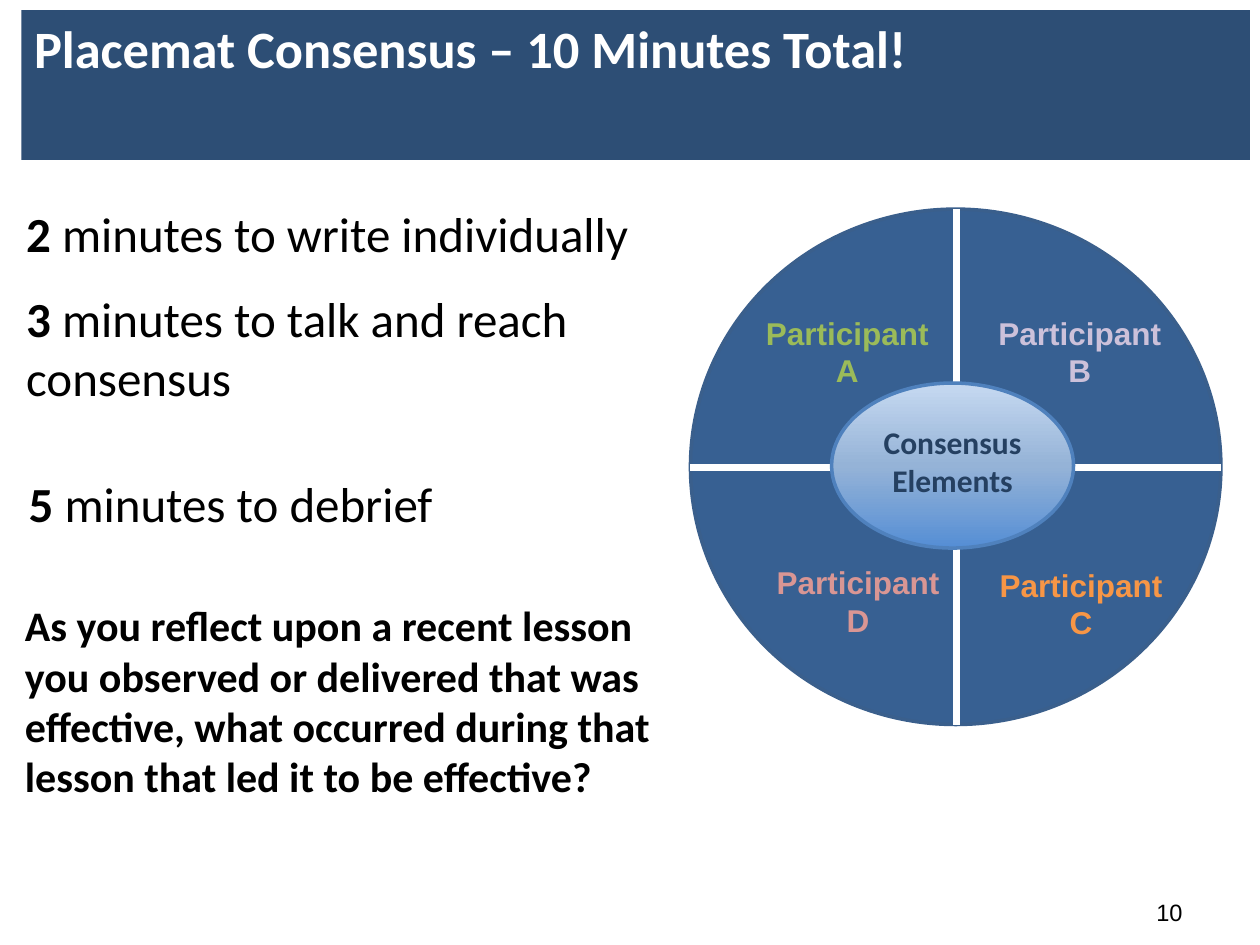
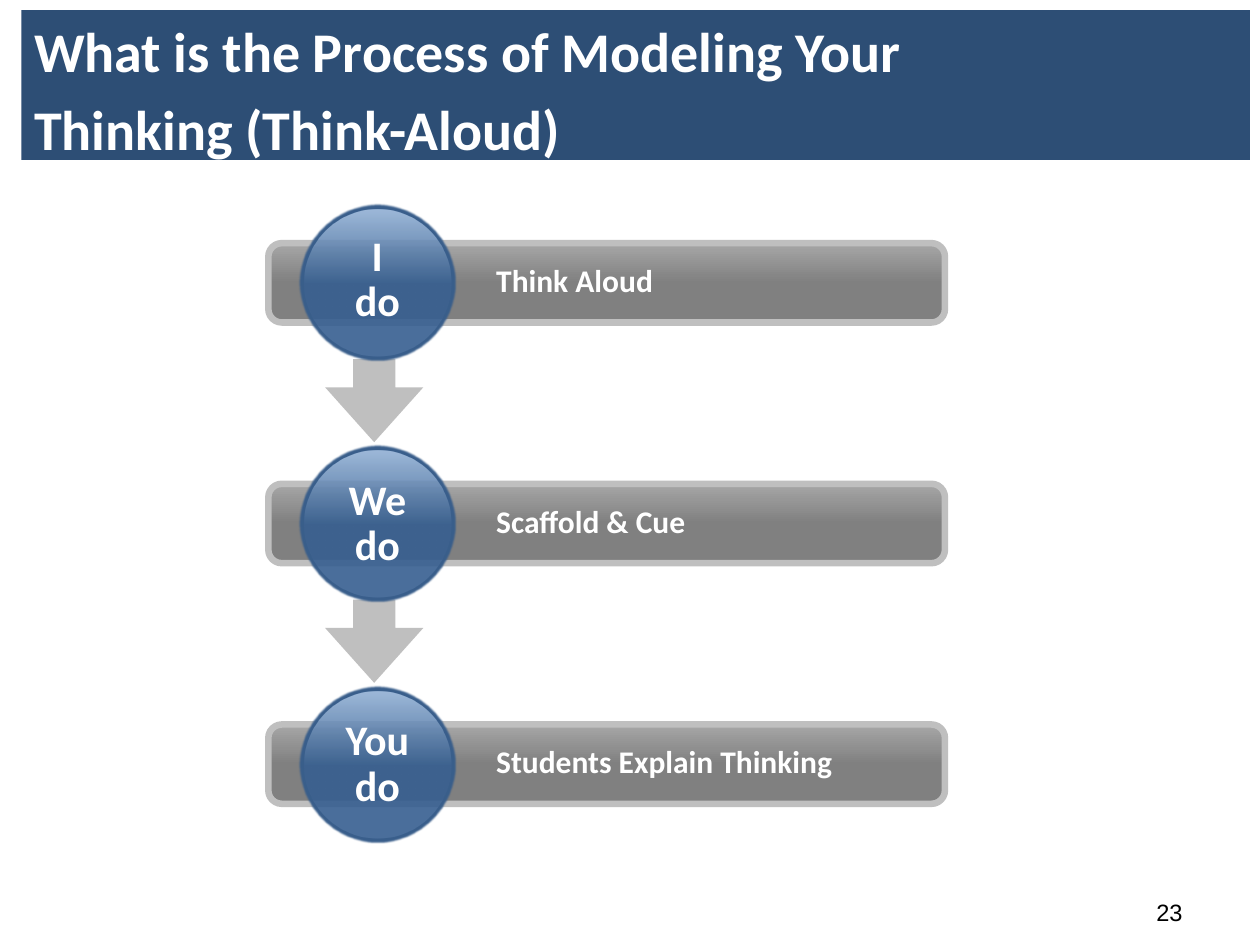
from dataclasses import dataclass
from typing import NamedTuple, Optional

import pptx
import pptx.dml.color
import pptx.enum.shapes
import pptx.enum.text
import pptx.oxml.ns
import pptx.util
from lxml import etree

PX = 9144  # EMU in one px, 100 px to the inch
SHAPE = pptx.enum.shapes.MSO_SHAPE
ALIGN = pptx.enum.text.PP_ALIGN
ANCHOR = pptx.enum.text.MSO_ANCHOR
qn = pptx.oxml.ns.qn


class Box(NamedTuple):
    x: int
    y: int
    w: int
    h: int

    def down(self, distance: int) -> "Box":
        return self._replace(y=self.y + distance)

    def emu(self) -> list[int]:
        return [length * PX for length in self]


class Stop(NamedTuple):
    percent: int
    color: str
    alpha: int = 100


@dataclass(frozen=True)
class Theme:
    body_font: str = "Calibri"
    label_font: str = "Arial"
    black: str = "000000"
    white: str = "FFFFFF"
    band: str = "2D4E75"
    disc: str = "376092"
    disc_line: str = "3A5F8C"
    hub_line: str = "4F81BD"
    hub_text: str = "254061"
    gray: str = "BFBFBF"
    hub_fill: tuple = (Stop(0, "C6D9F1"), Stop(50, "95B3D7"), Stop(100, "558ED5"))
    bar_fill: tuple = (Stop(0, "A6A6A6"), Stop(50, "808080"), Stop(100, "808080"))
    ball_fill: tuple = (Stop(0, "95B3D7", 89), Stop(50, "376092", 90),
                        Stop(100, "376092", 90))
    number_size: float = 13.5
    label_size: int = 18
    strong_size: int = 24
    timing_size: int = 28


THEME = Theme()


@dataclass(frozen=True)
class TextStyle:
    size: float
    color: str = THEME.black
    font: str = THEME.body_font
    bold: Optional[bool] = True
    align: ALIGN = ALIGN.LEFT
    leading: Optional[int] = None


class Timing(NamedTuple):
    minutes: str
    task: str
    box: Box


class Participant(NamedTuple):
    label: str
    color: str
    box: Box


class Step(NamedTuple):
    who: str
    action: str
    bottom_inset: int = 5


TITLE_BOX = Box(17, 8, 975, 119)
NUMBER_BOX = Box(908, 708, 43, 33)

TIMINGS = [
    Timing("2", " minutes to write individually", Box(11, 157, 560, 57)),
    Timing("3", " minutes to talk and reach consensus", Box(11, 224, 514, 104)),
    Timing("5", " minutes to debrief", Box(13, 371, 466, 57)),
]
PARTICIPANTS = [
    Participant("Participant A", "9BBB59", Box(594, 244, 157, 71)),
    Participant("Participant B", "CCC1DA", Box(774, 244, 166, 71)),
    Participant("Participant\nC", "F79646", Box(754, 444, 208, 71)),
    Participant("Participant D", "D99694", Box(600, 442, 162, 71)),
]
PLACEMAT = Box(548, 166, 421, 409)

STEPS = [
    Step("I\vdo", "Think Aloud", 10),
    Step("We do", "Scaffold & Cue"),
    Step("You do", "Students Explain Thinking"),
]
STEP_PITCH = 191
BAR = Box(213, 193, 537, 63)
BALL = Box(239, 164, 121, 121)
ARROW = Box(258, 285, 78, 66)
ACTION = Box(384, 206, 357, 37)


def rgb(color: str) -> pptx.dml.color.RGBColor:
    return pptx.dml.color.RGBColor.from_string(color)


def style_paragraph(p, style: TextStyle) -> None:
    p.alignment = style.align
    if style.leading:
        p.line_spacing = pptx.util.Pt(style.leading)
    p.font.name = style.font
    p.font.size = pptx.util.Pt(style.size)
    p.font.bold = style.bold
    p.font.color.rgb = rgb(style.color)


def write(tf, text: str, style: TextStyle) -> None:
    tf.text = text
    for p in tf.paragraphs:
        style_paragraph(p, style)


def add_text(slide, box: Box, text: str, style: TextStyle, wrap: bool = True):
    tf = slide.shapes.add_textbox(*box.emu()).text_frame
    tf.word_wrap = wrap
    write(tf, text, style)
    return tf


def fill_gradient(sp, stops: tuple) -> None:
    """Fill from top to bottom, with a transparency for each stop."""
    sp.fill.gradient()
    sp.fill.gradient_angle = 270
    stop_list = sp._element.spPr.find(qn("a:gradFill")).find(qn("a:gsLst"))
    for old_stop in list(stop_list):
        stop_list.remove(old_stop)
    for stop in stops:
        gs = etree.SubElement(stop_list, qn("a:gs"), pos=str(stop.percent * 1000))
        color = etree.SubElement(gs, qn("a:srgbClr"), val=stop.color)
        if stop.alpha < 100:
            etree.SubElement(color, qn("a:alpha"), val=str(stop.alpha * 1000))


def add_shape(slide, kind, box: Box, fill, line: Optional[str] = None,
              width: float = 0):
    sp = slide.shapes.add_shape(kind, *box.emu())
    sp.shadow.inherit = False
    if isinstance(fill, str):
        sp.fill.solid()
        sp.fill.fore_color.rgb = rgb(fill)
    else:
        fill_gradient(sp, fill)
    if line:
        sp.line.color.rgb = rgb(line)
        sp.line.width = pptx.util.Pt(width)
    else:
        sp.line.fill.background()
    return sp


def add_line(slide, x1: int, y1: int, x2: int, y2: int) -> None:
    line = slide.shapes.add_connector(
        pptx.enum.shapes.MSO_CONNECTOR.STRAIGHT, x1 * PX, y1 * PX, x2 * PX, y2 * PX)
    line.line.color.rgb = rgb(THEME.white)
    line.line.width = pptx.util.Pt(4)
    etree.SubElement(line._element.spPr, qn("a:effectLst"))


def add_slide(prs, title: str, title_size: int, number: str):
    """Start a slide with the title band and the page number."""
    slide = prs.slides.add_slide(prs.slide_layouts[5])
    sp = slide.shapes.title
    sp.left, sp.top, sp.width, sp.height = TITLE_BOX.emu()
    sp.fill.solid()
    sp.fill.fore_color.rgb = rgb(THEME.band)
    tf = sp.text_frame
    tf.auto_size = pptx.enum.text.MSO_AUTO_SIZE.NONE
    tf.vertical_anchor = ANCHOR.TOP
    write(tf, title, TextStyle(title_size, THEME.white))
    for p in tf.paragraphs[1:]:
        p.space_before = pptx.util.Pt(title_size * 0.2)
    add_text(slide, NUMBER_BOX, number,
             TextStyle(THEME.number_size, font=THEME.label_font, bold=False), wrap=False)
    return slide


def build_placemat(prs) -> None:
    slide = add_slide(prs, "Placemat Consensus – 10 Minutes Total!", 30, "10")

    # Timings, each with a bold number of minutes
    for timing in TIMINGS:
        tf = add_text(slide, timing.box, "", TextStyle(THEME.timing_size, bold=None))
        p = tf.paragraphs[0]
        for text, bold in ((timing.minutes, True), (timing.task, False)):
            r = p.add_run()
            r.text = text
            r.font.bold = bold

    # Round placemat with four participants
    add_shape(slide, SHAPE.OVAL, PLACEMAT, THEME.disc, THEME.disc_line, 2)
    for person in PARTICIPANTS:
        add_text(slide, person.box, person.label,
                 TextStyle(THEME.label_size, person.color, THEME.label_font,
                           align=ALIGN.CENTER))
    x, y, w, h = PLACEMAT
    add_line(slide, x + w // 2 + 1, y, x + w // 2 + 1, y + h)
    add_line(slide, x, y + h // 2 + 1, x + w, y + h // 2 + 1)

    # Shared centre
    add_shape(slide, SHAPE.OVAL, Box(660, 304, 192, 131), THEME.hub_fill,
              THEME.hub_line, 2)
    add_text(slide, Box(677, 331, 158, 71), "Consensus Elements",
             TextStyle(THEME.label_size, THEME.hub_text, align=ALIGN.CENTER))

    # Question for reflection
    add_text(slide, Box(10, 471, 540, 172),
             "As you reflect upon a recent lesson you observed or delivered that was "
             "effective, what occurred during that lesson that led it to be effective?",
             TextStyle(THEME.strong_size))


def add_step(slide, step: Step, offset: int) -> None:
    bar = add_shape(slide, SHAPE.ROUNDED_RECTANGLE, BAR.down(offset), THEME.bar_fill,
                    THEME.gray, 3.75)
    bar.adjustments[0] = 0.17
    ball = add_shape(slide, SHAPE.OVAL, BALL.down(offset), THEME.ball_fill,
                     THEME.disc_line, 3.25)
    effects = ball._element.spPr.find(qn("a:effectLst"))
    etree.SubElement(effects, qn("a:softEdge"), rad="12700")
    tf = ball.text_frame
    tf.word_wrap = True
    tf.vertical_anchor = ANCHOR.MIDDLE
    tf.margin_left = tf.margin_top = tf.margin_right = 5 * PX
    tf.margin_bottom = step.bottom_inset * PX
    write(tf, step.who, TextStyle(THEME.strong_size, THEME.white,
                                  align=ALIGN.CENTER, leading=26))
    add_text(slide, ACTION.down(offset), step.action,
             TextStyle(THEME.label_size, THEME.white, leading=19))


def build_think_aloud(prs) -> None:
    slide = add_slide(
        prs, "What is the Process of Modeling Your\nThinking (Think-Aloud)", 32, "23")

    # Arrows between the steps, behind the balls
    for i in range(len(STEPS) - 1):
        arrow = add_shape(slide, SHAPE.DOWN_ARROW, ARROW.down(i * STEP_PITCH), THEME.gray)
        arrow.adjustments[0] = 0.43
        arrow.adjustments[1] = 0.66

    for i, step in enumerate(STEPS):
        add_step(slide, step, i * STEP_PITCH)


def main() -> None:
    prs = pptx.Presentation()
    prs.slide_width, prs.slide_height = 1000 * PX, 750 * PX
    build_placemat(prs)
    build_think_aloud(prs)
    prs.save("out.pptx")


if __name__ == "__main__":
    main()
